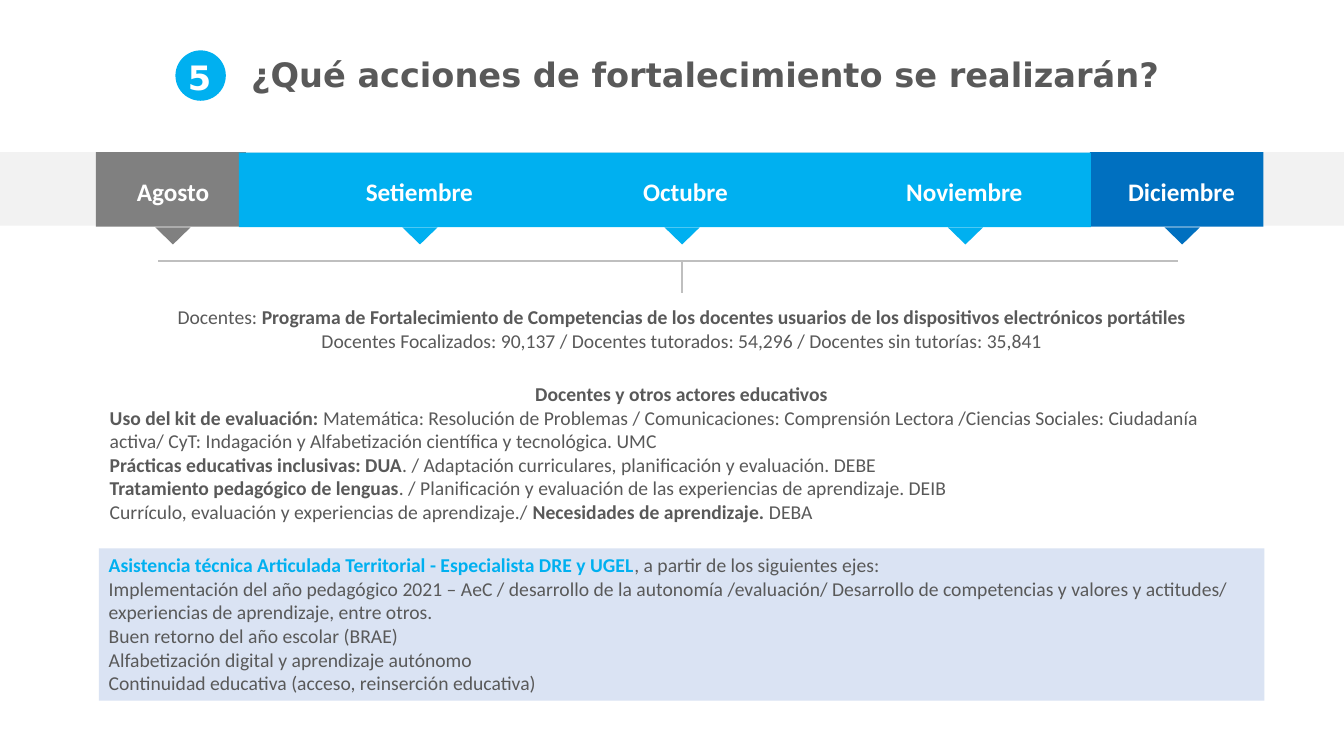
from dataclasses import dataclass

from lxml import etree
from pptx import Presentation
from pptx.dml.color import RGBColor
from pptx.enum.shapes import MSO_CONNECTOR, MSO_SHAPE
from pptx.enum.text import MSO_ANCHOR, PP_ALIGN
from pptx.oxml.ns import qn
from pptx.shapes.autoshape import Shape
from pptx.slide import Slide
from pptx.util import Emu, Inches, Pt

RECTANGLE, OVAL, TRIANGLE = MSO_SHAPE.RECTANGLE, MSO_SHAPE.OVAL, MSO_SHAPE.ISOSCELES_TRIANGLE
STRAIGHT = MSO_CONNECTOR.STRAIGHT
LEFT, CENTER = PP_ALIGN.LEFT, PP_ALIGN.CENTER
TOP, MIDDLE = MSO_ANCHOR.TOP, MSO_ANCHOR.MIDDLE

COLUMNS, ROWS = 133.3, 75  # ten grid units to the inch


@dataclass(frozen=True)
class Theme:
    ink: str = "595959"
    white: str = "FFFFFF"
    band: str = "F2F2F2"
    gray: str = "808080"
    rule: str = "BFBFBF"
    sky: str = "00B0F0"
    blue: str = "0070C0"
    panel: str = "DAE3F3"
    body_font: str = "Calibri"
    title_font: str = "DejaVu Sans"
    body_size: int = 14
    month_size: int = 18
    title_size: int = 24
    rule_width: float = 1.5


THEME = Theme()


@dataclass(frozen=True)
class Area:
    column: float
    row: float
    columns: float
    rows: float


@dataclass(frozen=True)
class Span:
    text: str
    bold: bool = False
    color: str = THEME.ink
    size: int = THEME.body_size
    font: str = THEME.body_font


@dataclass(frozen=True)
class Line:
    spans: tuple[Span, ...]
    align: PP_ALIGN = LEFT
    spacing: float = 1.0


@dataclass(frozen=True)
class Block:
    area: Area
    lines: tuple[Line, ...]
    anchor: MSO_ANCHOR = TOP
    left_inset: float = 1
    wrap: bool = True
    fill: str = ""


@dataclass(frozen=True)
class Month:
    name: str
    label_column: float
    label_columns: float
    pointer_column: float
    color: str


BANDS = (
    (Area(0, 15.1, COLUMNS, 7.3), THEME.band),
    (Area(9.5, 15.1, 14.9, 7.4), THEME.gray),
    (Area(108.1, 15.1, 17.2, 7.4), THEME.blue),
    (Area(23.7, 15.15, 84.5, 7.4), THEME.sky),
)

MONTHS = (
    Month("Agosto", 12.6, 9.2, 15.4, THEME.gray),
    Month("Setiembre", 35.3, 12.7, 39.9, THEME.sky),
    Month("Octubre", 62.8, 10.5, 65.9, THEME.sky),
    Month("Noviembre", 88.9, 13.6, 94, THEME.sky),
    Month("Diciembre", 110.9, 12.7, 115.5, THEME.blue),
)

RULES = ((67.6, 25.9, 67.6, 29.1), (15.7, 25.9, 116.8, 25.9))
BADGE = Area(17.4, 5, 5, 5)


def heading(text: str, color: str) -> Span:
    return Span(text, True, color, THEME.title_size, THEME.title_font)


BLOCKS = (
    Block(Area(20.9, 5.6, 110.9, 3.9),
          (Line((heading("¿Qué acciones de fortalecimiento se realizarán?", THEME.ink),), LEFT, 0.9),),
          MIDDLE, left_inset=4),
    Block(Area(17.3, 5.7, 5, 4.3), (Line((heading("5", THEME.white),), CENTER, 0.9),), MIDDLE),
    Block(Area(9.4, 29.8, 116.5, 5.7), (
        Line((Span("Docentes: "),
              Span("Programa de Fortalecimiento de Competencias de los docentes usuarios "
                   "de los dispositivos electrónicos portátiles", True)), CENTER),
        Line((Span("Docentes Focalizados: 90,137 / Docentes tutorados: 54,296 / "
                   "Docentes sin tutorías: 35,841"),), CENTER),
    )),
    Block(Area(9.9, 37.4, 115.4, 15.1), (
        Line((Span("Docentes y otros actores educativos", True),), CENTER),
        Line((Span("Uso del kit de evaluación: ", True),
              Span("Matemática: Resolución de Problemas / Comunicaciones: Comprensión Lectora "
                   "/Ciencias Sociales: Ciudadanía activa/ CyT: Indagación y Alfabetización "
                   "científica y tecnológica. UMC"))),
        Line((Span("Prácticas educativas inclusivas: DUA", True),
              Span(". / Adaptación curriculares, planificación y evaluación. DEBE"))),
        Line((Span("Tratamiento pedagógico de lenguas", True),
              Span(". / Planificación y evaluación de las experiencias de aprendizaje. DEIB"))),
        Line((Span("Currículo, evaluación y experiencias de aprendizaje./ "),
              Span("Necesidades de aprendizaje. ", True), Span("DEBA"))),
    )),
    Block(Area(9.8, 54.4, 115.6, 15.1), (
        Line((Span("Asistencia técnica Articulada Territorial - Especialista DRE y UGEL", True, THEME.sky),
              Span(", a partir de los siguientes ejes:"))),
        Line((Span("Implementación del año pedagógico 2021 – AeC / desarrollo de la autonomía "
                   "/evaluación/ Desarrollo de competencias y valores y actitudes/ "
                   "experiencias de aprendizaje, entre otros."),)),
        Line((Span("Buen retorno del año escolar (BRAE)"),)),
        Line((Span("Alfabetización digital y aprendizaje autónomo"),)),
        Line((Span("Continuidad educativa (acceso, reinserción educativa)"),)),
    ), fill=THEME.panel),
)


def grid(units: float) -> Emu:
    return Inches(units / 10)


def bounds(area: Area) -> tuple[Emu, Emu, Emu, Emu]:
    return grid(area.column), grid(area.row), grid(area.columns), grid(area.rows)


def add_filled(page: Slide, kind: MSO_SHAPE, area: Area, color: str) -> Shape:
    shape = page.shapes.add_shape(kind, *bounds(area))
    shape.shadow.inherit = False
    shape.fill.solid()
    shape.fill.fore_color.rgb = RGBColor.from_string(color)
    shape.line.fill.background()
    return shape


def add_block(page: Slide, block: Block) -> None:
    if block.fill:
        box = add_filled(page, RECTANGLE, block.area, block.fill)
    else:
        box = page.shapes.add_textbox(*bounds(block.area))
    frame = box.text_frame
    frame.word_wrap = block.wrap
    frame.vertical_anchor = block.anchor
    frame.margin_left = grid(block.left_inset)
    frame.text = "\n".join("" for _ in block.lines)
    for para, line in zip(frame.paragraphs, block.lines):
        para.alignment = line.align
        para.line_spacing = line.spacing
        for span in line.spans:
            run = para.add_run()
            run.text = span.text
            run.font.name = span.font
            run.font.size = Pt(span.size)
            run.font.bold = span.bold
            run.font.color.rgb = RGBColor.from_string(span.color)


def add_month(page: Slide, month: Month) -> None:
    label = Span(month.name, True, THEME.white, THEME.month_size)
    add_block(page, Block(Area(month.label_column, 17, month.label_columns, 4),
                          (Line((label,)),), wrap=False))
    pointer = add_filled(page, TRIANGLE, Area(month.pointer_column, 22.55, 3.5, 1.7), month.color)
    pointer.rotation = 180


def add_rule(page: Slide, ends: tuple[float, float, float, float]) -> None:
    rule = page.shapes.add_connector(STRAIGHT, *map(grid, ends))
    rule.line.color.rgb = RGBColor.from_string(THEME.rule)
    rule.line.width = Pt(THEME.rule_width)
    etree.SubElement(rule.element.spPr, qn("a:effectLst"))


def main() -> None:
    deck = Presentation()
    deck.slide_width, deck.slide_height = grid(COLUMNS), grid(ROWS)
    page = deck.slides.add_slide(deck.slide_layouts[6])
    for area, color in BANDS:
        add_filled(page, RECTANGLE, area, color)
    for month in MONTHS:
        add_month(page, month)
    add_filled(page, OVAL, BADGE, THEME.sky)
    for block in BLOCKS:
        add_block(page, block)
    for ends in RULES:
        add_rule(page, ends)
    deck.save("out.pptx")


if __name__ == "__main__":
    main()
